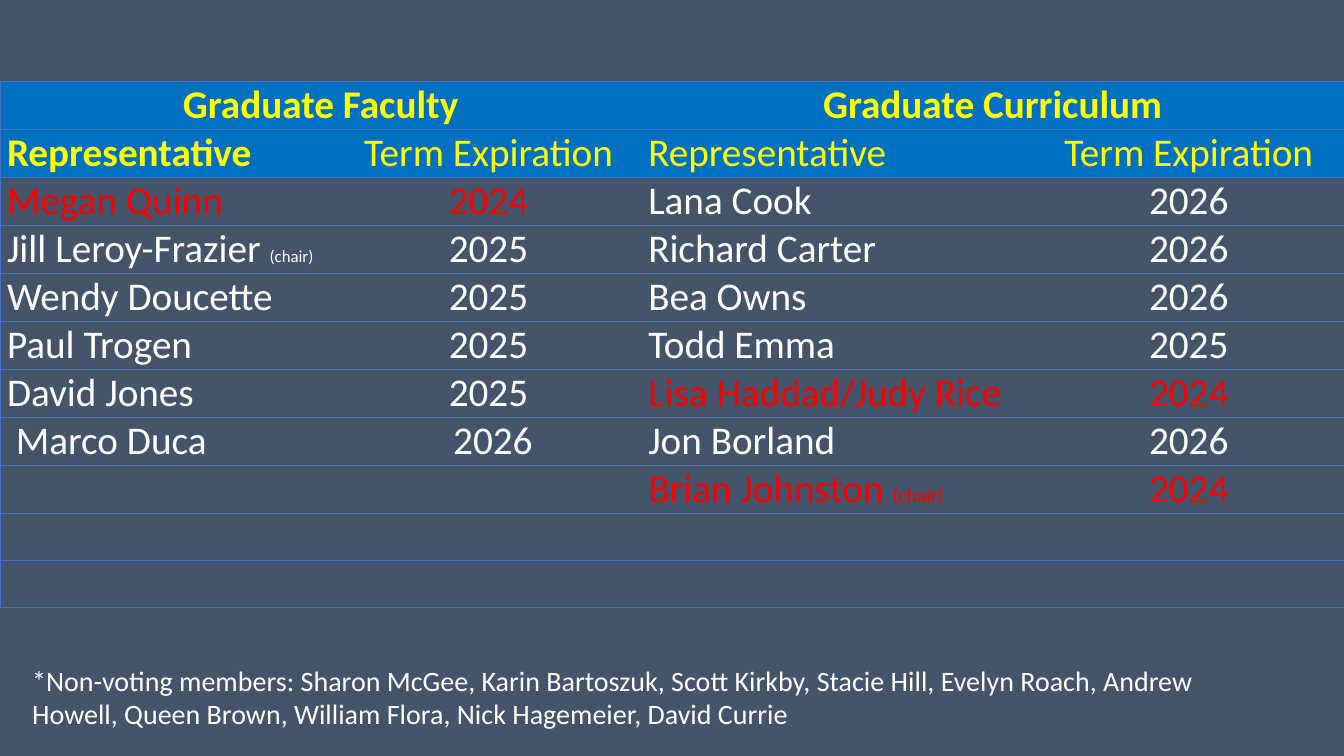
import pptx
import pptx.util
import pptx.dml.color
import pptx.enum.text
import pptx.oxml
import pptx.oxml.ns
from pptx.util import Inches, Pt

COLORS = {"back": "44546A", "head": "0070C0", "title": "FFFF00",
          "text": "FFFFFF", "ends": "FF0000", "rule": "4472C4"}
CENTER = pptx.enum.text.PP_ALIGN.CENTER


def rgb(name):
    return pptx.dml.color.RGBColor.from_string(COLORS[name])


def style(run, size, color, bold=False):
    run.font.name = "Calibri"
    run.font.size = Pt(size)
    run.font.bold = bold
    run.font.color.rgb = rgb(color)


deck = pptx.Presentation()
deck.slide_width, deck.slide_height = Inches(13.33), Inches(7.5)
slide = deck.slides.add_slide(deck.slide_layouts[6])
slide.background.fill.solid()
slide.background.fill.fore_color.rgb = rgb("back")

labels = ("Representative", "Term Expiration")
rows = [
    ("Graduate Faculty", "", "Graduate Curriculum", ""),
    labels * 2,
    ("Megan Quinn", "2024", "Lana Cook", "2026"),
    ("Jill Leroy-Frazier (chair)", "2025", "Richard Carter", "2026"),
    ("Wendy Doucette", "2025", "Bea Owns", "2026"),
    ("Paul Trogen", "2025", "Todd Emma", "2025"),
    ("David Jones", "2025", "Lisa Haddad/Judy Rice", "2024"),
    (" Marco Duca", " 2026", "Jon Borland", "2026"),
    ("", "", "Brian Johnston (chair)", "2024"),
    ("",) * 4,
    ("",) * 4,
]
widths = (3.33, 3.03, 3.89, 3.08)
chair = "(chair)"
small = {0: 12, 2: 14}  # size of the chair note by column

frame = slide.shapes.add_table(len(rows), len(widths), 0, Inches(0.81),
                               Inches(13.33), Inches(5.13))
table = frame.table
table.first_row = table.horz_banding = False
plain = "{2D5ABB26-0587-4C30-8999-92F81FD0307C}"
table._tbl.tblPr.find(pptx.oxml.ns.qn("a:tableStyleId")).text = plain
for col, width in zip(table.columns, widths):
    col.width = Inches(width)
for left in (0, 2):
    table.cell(0, left).merge(table.cell(0, left + 1))

for r, row in enumerate(rows):
    for c, text in enumerate(row):
        cell = table.cell(r, c)
        cell.margin_left = cell.margin_right = Inches(0.07)
        cell.margin_top = cell.margin_bottom = 0

        sides = {"L": c == 0, "R": c == 3, "T": True, "B": True}
        for side, shown in sides.items():
            paint = (f'<a:solidFill><a:srgbClr val="{COLORS["rule"]}"/></a:solidFill>'
                     if shown else "<a:noFill/>")
            cell._tc.get_or_add_tcPr().append(pptx.oxml.parse_xml(
                f'<a:ln{side} {pptx.oxml.ns.nsdecls("a")} w="{Pt(0.5)}">'
                f'{paint}</a:ln{side}>'))
        if r < 2:
            cell.fill.solid()
            cell.fill.fore_color.rgb = rgb("head")
        else:
            cell.fill.background()

        if not text:
            continue
        para = cell.text_frame.paragraphs[0]
        if r == 0 or c % 2:
            para.alignment = CENTER
        term = row[c // 2 * 2 + 1]
        color = "title" if r < 2 else "ends" if term == "2024" else "text"
        run = para.add_run()
        run.text = text.removesuffix(chair)
        style(run, 28, color, r == 0 or (r, c) == (1, 0))
        if text.endswith(chair):
            run = para.add_run()
            run.text = chair
            style(run, small[c], color)

note = slide.shapes.add_textbox(Inches(0.22), Inches(6.53),
                                Inches(12.35), Inches(0.77))
note.text_frame.word_wrap = True
note.text_frame.text = (
    "*Non-voting members: Sharon McGee, Karin Bartoszuk, Scott Kirkby, "
    "Stacie Hill, Evelyn Roach, Andrew Howell, Queen Brown, William Flora, "
    "Nick Hagemeier, David Currie")
style(note.text_frame.paragraphs[0].runs[0], 20, "text")

deck.save("out.pptx")
